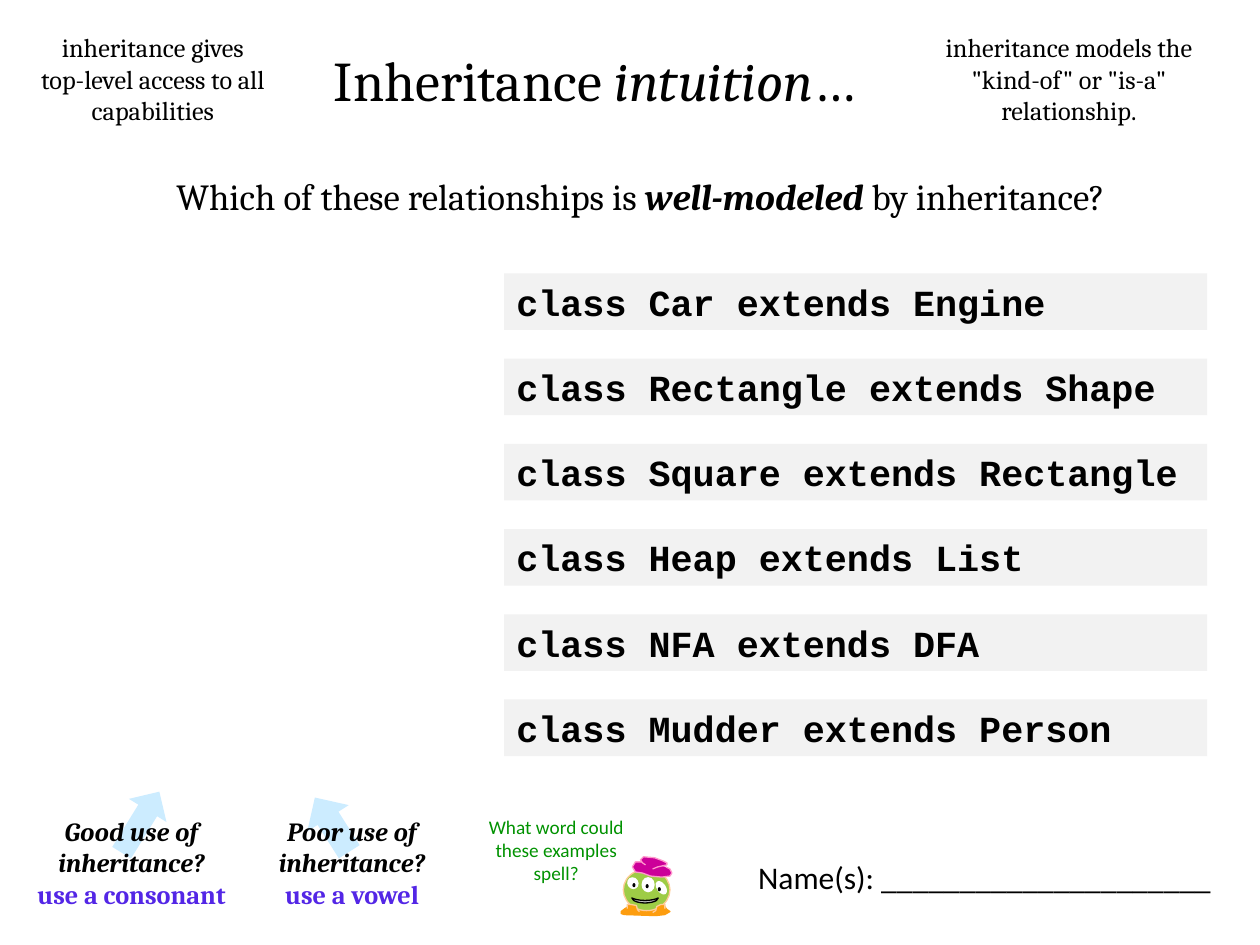
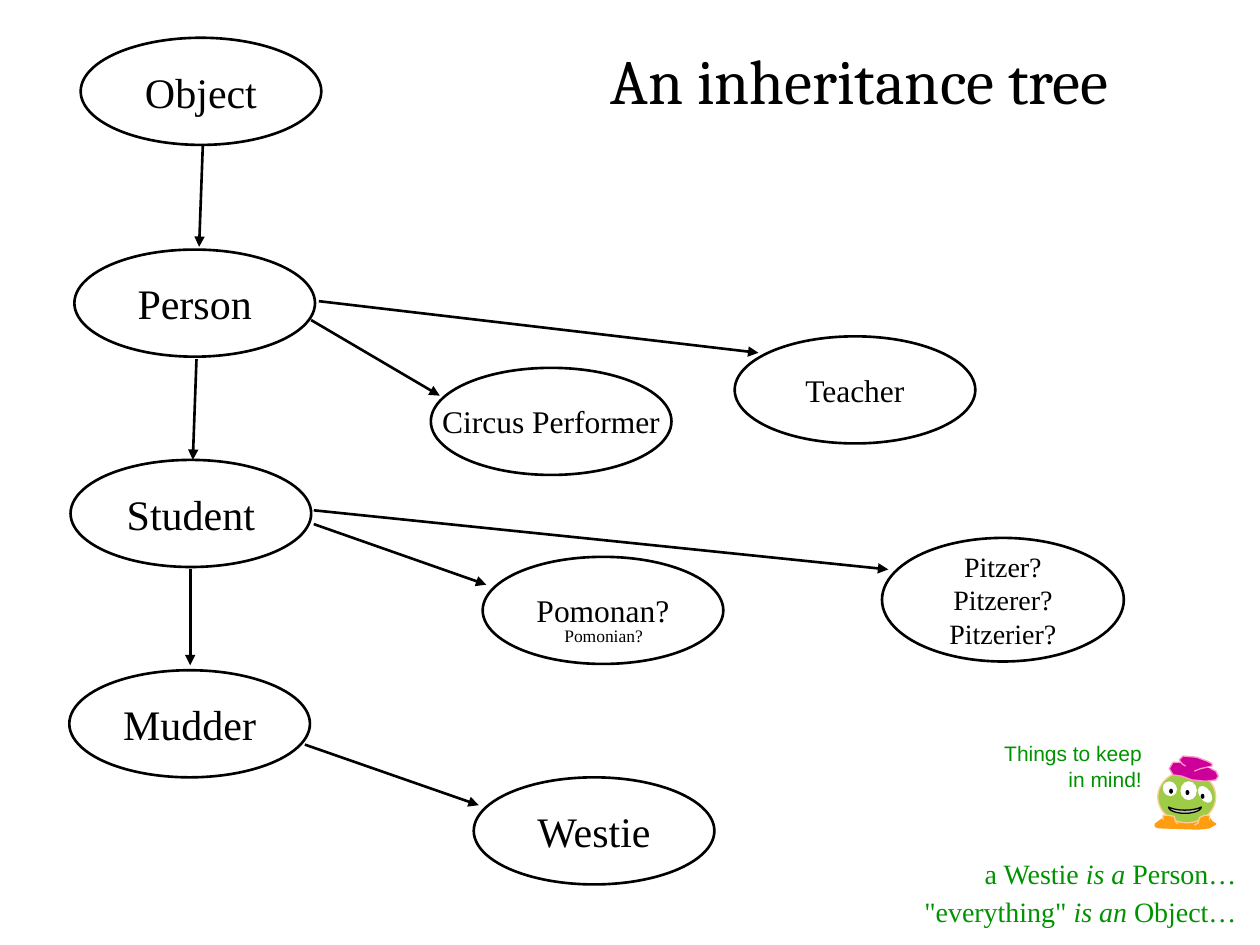
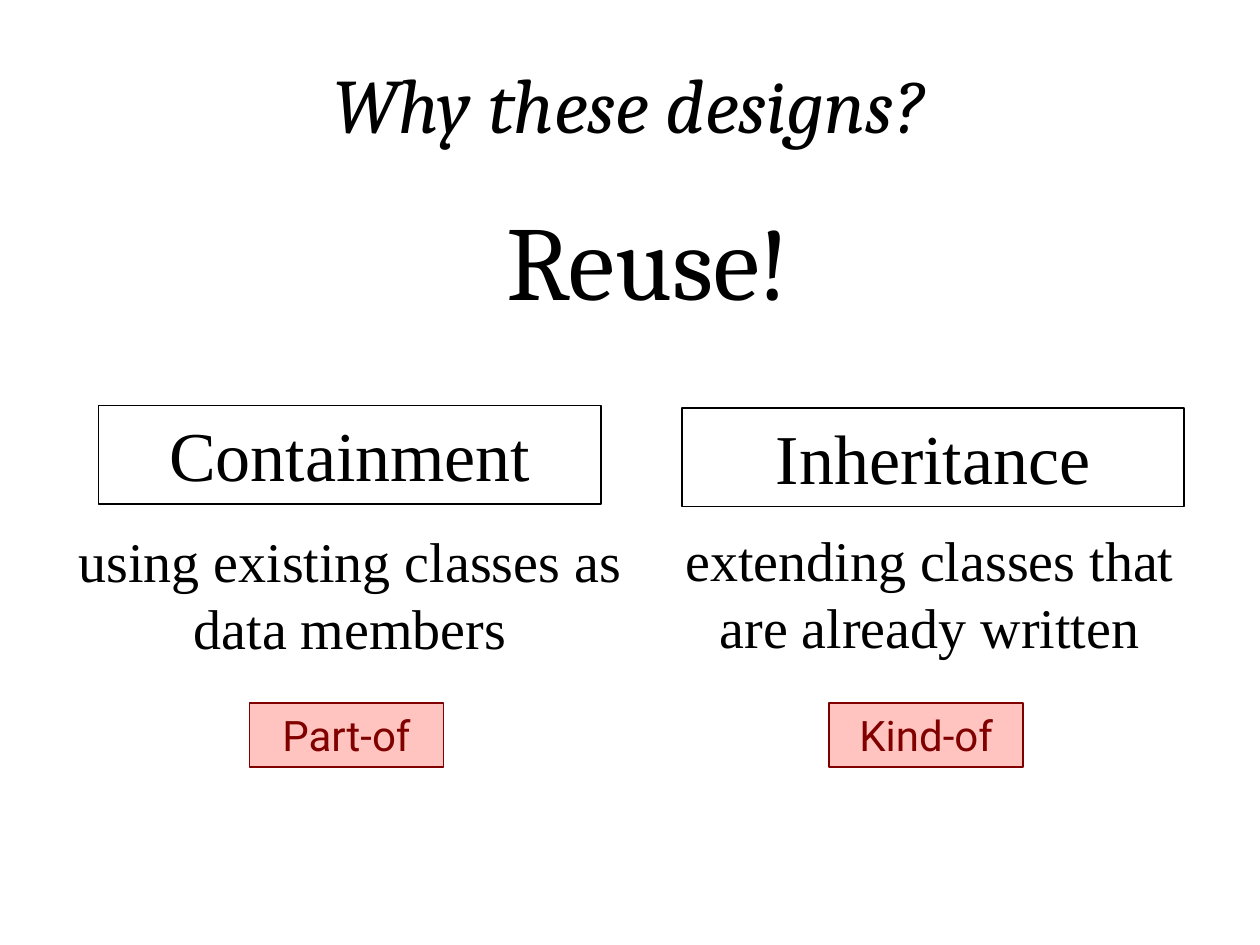
from dataclasses import dataclass, replace
from typing import NamedTuple

from lxml.etree import SubElement
from pptx import Presentation
from pptx.dml.color import RGBColor as Rgb
from pptx.enum.shapes import MSO_CONNECTOR as Link, MSO_SHAPE as Kind
from pptx.enum.text import MSO_ANCHOR as Anchor, MSO_AUTO_SIZE as Fit, PP_ALIGN as Align
from pptx.oxml.ns import qn
from pptx.util import Pt


@dataclass(frozen=True)
class Style:
    font: str
    size: float
    color: str = "000000"
    bold: bool = False
    ital: bool = False


@dataclass(frozen=True)
class Theme:
    ink: str = "000000"
    white: str = "FFFFFF"
    sky: str = "CCECFF"
    gray: str = "F2F2F2"
    pink: str = "FFC3C0"
    wine: str = "800000"
    violet: str = "5326E6"
    skin: str = "9ECC46"
    peach: str = "FFCC99"
    orange: str = "FD9D0F"
    plum: str = "CC0099"
    rose: str = "FF99CC"
    silver: str = "C0C0C0"
    title: Style = Style("Cambria", 32)
    ask: Style = Style("Cambria", 21)
    note: Style = Style("Cambria", 15)
    code: Style = Style("Courier New", 21, bold=True)
    quiz: Style = Style("Calibri", 11, "009200")
    name: Style = Style("Calibri", 18)
    node: Style = Style("Times New Roman", 24)
    aside: Style = Style("Times New Roman", 16, "009200")
    tip: Style = Style("Arial", 12, "009200")
    shout: Style = Style("Cambria", 60)
    head: Style = Style("Times New Roman", 40)
    body: Style = Style("Times New Roman", 32)
    tag: Style = Style("Roboto", 24, "800000")


T = Theme()


class Box(NamedTuple):
    x: float
    y: float
    w: float
    h: float


class Run(NamedTuple):
    text: str
    style: Style


class Node(NamedTuple):
    lines: tuple[str, ...]
    x: float
    y: float
    size: float = 24
    w: float = 137.5
    h: float = 61.2


class Arrow(NamedTuple):
    x1: float
    y1: float
    x2: float
    y2: float


class Column(NamedTuple):
    head: str
    head_box: Box
    text: str
    text_box: Box
    tag: str
    tag_box: Box


Lines = list[list[Run]]


def pts(box: Box) -> list[Pt]:
    return [Pt(n) for n in box]


def plain(style: Style, *lines: str) -> Lines:
    """Make one single-run paragraph per line."""
    return [[Run(line, style)] for line in lines]


def write(shape, lines: Lines, align=Align.CENTER, wrap: bool = True,
          fit=Fit.SHAPE_TO_FIT_TEXT, anchor=Anchor.TOP) -> None:
    frame = shape.text_frame
    frame.word_wrap, frame.auto_size, frame.vertical_anchor = wrap, fit, anchor
    for i, line in enumerate(lines):
        para = frame.paragraphs[0] if i == 0 else frame.add_paragraph()
        para.alignment = align
        for text, style in line:
            run = para.add_run()
            run.text = text
            font = run.font
            font.name, font.size = style.font, Pt(style.size)
            font.bold, font.italic = style.bold, style.ital
            font.color.rgb = Rgb.from_string(style.color)


def paint(shape, fill: str | None, line: str | None, width: float) -> None:
    shape.shadow.inherit = False
    if fill:
        shape.fill.solid()
        shape.fill.fore_color.rgb = Rgb.from_string(fill)
    else:
        shape.fill.background()
    if line:
        shape.line.color.rgb = Rgb.from_string(line)
        shape.line.width = Pt(width)
    else:
        shape.line.fill.background()


def form(shapes, kind, box: Box, fill: str | None = None, line: str | None = None,
         width: float = 1, turn: float = 0):
    """Add a painted preset shape."""
    shape = shapes.add_shape(kind, *pts(box))
    shape.rotation = turn
    paint(shape, fill, line, width)
    return shape


def label(slide, box: Box, lines: Lines, align=Align.CENTER, wrap: bool = True) -> None:
    write(slide.shapes.add_textbox(*pts(box)), lines, align, wrap)


def start(deck, box: Box, runs: list[Run]):
    """Add a slide with its title set in the given box."""
    slide = deck.slides.add_slide(deck.slide_layouts[5])
    title = slide.shapes.title
    title.left, title.top, title.width, title.height = pts(box)
    write(title, [runs])
    return slide


def join(slide, arrow: Arrow) -> None:
    line = slide.shapes.add_connector(Link.STRAIGHT, *[Pt(n) for n in arrow])
    line.line.color.rgb = Rgb.from_string(T.ink)
    line.line.width = Pt(1.5)
    SubElement(line.line._get_or_add_ln(), qn("a:tailEnd"), type="triangle")
    SubElement(line._element.spPr, qn("a:effectLst"))


FOOT = [(24, 44), (34, 45), (42, 48), (45, 52), (48, 54), (43, 57), (34, 58),
        (3, 57), (0, 56), (0, 54), (4, 51), (9, 48), (17, 44)]
BRIM = [(23, 5), (14, 5), (11, 10), (14, 15), (21, 16), (29, 19), (40, 20),
        (48, 19), (50, 16), (48, 12), (44, 10)]
CROWN = [(24, 8), (21, 6), (19, 3), (22, 0), (33, 1), (41, 4), (45, 6),
         (45, 8), (36, 10), (31, 12)]
LEGS = ([(6, 51), (6, 47), (10, 47), (15, 48), (16, 52), (18, 54)],
        [(43, 51), (43, 47), (39, 47), (35, 49), (34, 53), (31, 55)])
EYES = [(Box(6, 20, 11, 12), 327.2), (Box(20, 20, 13, 15), 0), (Box(35, 23, 9, 15), 325.5)]
PUPILS = [(11, 26), (24, 27), (36, 30)]


def alien(slide, x: float, y: float, unit: float) -> None:
    """Draw the three-eyed figure; unit is the length of one grid step."""
    group = slide.shapes.add_group_shape().shapes

    def part(kind, box: Box, fill: str, line: str | None = None, turn: float = 0) -> None:
        place = Box(x + box.x * unit, y + box.y * unit, box.w * unit, box.h * unit)
        form(group, kind, place, fill, line, 0.75, turn)

    def trace(dots: list[tuple[int, int]], fill: str, line: str, close: bool = False) -> None:
        path = group.build_freeform(*dots[0], scale=Pt(unit))
        path.add_line_segments(dots[1:], close=close)
        paint(path.convert_to_shape(Pt(x), Pt(y)), fill, line, 0.75)

    trace(FOOT, T.orange, T.orange, close=True)
    part(Kind.OVAL, Box(2, 12, 46, 41), T.skin, T.peach)
    for box, turn in EYES:
        part(Kind.OVAL, box, T.white, turn=turn)
    for px, py in PUPILS:
        part(Kind.OVAL, Box(px, py, 3, 4), T.ink)
    part(Kind.MOON, Box(21, 30, 5, 26), T.silver, T.ink, 270)
    for dots in (BRIM, CROWN):
        trace(dots, T.plum, T.rose)
    for dots in LEGS:
        trace(dots, T.orange, T.peach)


CLASSES = ["Car extends Engine", "Rectangle extends Shape", "Square extends Rectangle",
           "Heap extends List", "NFA extends DFA", "Mudder extends Person"]


def quiz(deck) -> None:
    slide = start(deck, Box(121.7, 22.3, 436.3, 46), [
        Run("Inheritance ", T.title), Run("intuition", replace(T.title, ital=True)),
        Run("…", T.title)])
    form(slide.shapes, Kind.DOWN_ARROW, Box(175.7, 452.9, 28.1, 36.7), T.sky, turn=147.6)
    form(slide.shapes, Kind.DOWN_ARROW, Box(67.7, 449.3, 25.2, 41), T.sky, turn=211.7)
    label(slide, Box(15, 14.4, 144.7, 62),
          plain(T.note, "inheritance gives top-level access to all capabilities"))
    label(slide, Box(512.6, 14.4, 196.6, 62),
          plain(T.note, 'inheritance models the "kind-of" or "is-a" relationship.'))
    label(slide, Box(48.2, 95.8, 635.8, 32.4), [[
        Run("Which of these relationships is ", T.ask),
        Run("well-modeled ", replace(T.ask, bold=True, ital=True)),
        Run("by inheritance?", T.ask)]])
    for i, text in enumerate(CLASSES):
        bar = form(slide.shapes, Kind.RECTANGLE, Box(288, 156.2 + 48.7 * i, 401.8, 32.4), T.gray)
        write(bar, plain(T.code, "class " + text), Align.LEFT)
    strong = replace(T.note, bold=True)
    for i, (use, kind) in enumerate([("Good", "consonant"), ("Poor", "vowel")]):
        label(slide, Box(12.2 + 126 * i, 462.2, 126, 62), [
            [Run(f"{use} use of inheritance?", replace(strong, ital=True))],
            [Run(f"use a {kind}", replace(strong, color=T.violet))]])
    alien(slide, 355, 489.6, 0.58)
    label(slide, Box(270, 462.2, 95.8, 47.5),
          plain(T.quiz, "What word could these examples spell?"))
    label(slide, Box(426.2, 486.7, 276.5, 28.8),
          plain(T.name, "Name(s): _____________________"), Align.LEFT, wrap=False)


NODES = [
    Node(("Object",), 46.1, 21.6),
    Node(("Person",), 42.5, 142.6),
    Node(("Student",), 40.3, 262.8),
    Node(("Mudder",), 39.6, 383),
    Node(("Circus Performer",), 246.2, 210.2, 18),
    Node(("Teacher",), 419.8, 192.2, 18),
    Node(("Pomonan?",), 275.8, 318.2, 18),
    Node(("Westie",), 270.7, 444.2),
    Node(("Pitzer?", "Pitzerer?", "Pitzerier?"), 504, 307.4, 16, 138.2, 70.6),
]
ARROWS = [
    Arrow(115.9, 83.5, 113.8, 141.1),
    Arrow(112.3, 205.2, 110.2, 262.8),
    Arrow(108.7, 325.4, 108.7, 380.2),
    Arrow(177.8, 182.9, 251.3, 226.1),
    Arrow(182.2, 172.1, 433.4, 201.6),
    Arrow(179.3, 299.5, 277.9, 334.1),
    Arrow(179.3, 291.6, 507.6, 325.4),
    Arrow(174.2, 425.5, 273.6, 460.1),
]


def tree(deck) -> None:
    slide = start(deck, Box(293.8, 20.2, 394.6, 51.1),
                  [Run("An inheritance tree", replace(T.title, size=36))])
    for node in NODES:
        oval = form(slide.shapes, Kind.OVAL, Box(node.x, node.y, node.w, node.h),
                    line=T.ink, width=1.5)
        write(oval, plain(replace(T.node, size=node.size), *node.lines),
              wrap=False, fit=Fit.NONE, anchor=Anchor.MIDDLE)
    for arrow in ARROWS:
        join(slide, arrow)
    label(slide, Box(315.4, 353.5, 59.8, 19.4),
          plain(replace(T.node, size=10), "Pomonian?"), Align.LEFT, wrap=False)
    asides = [("a Westie ", "is a ", "Person…"), ('"everything" ', "is an ", "Object…")]
    for i, (who, link, what) in enumerate(asides):
        label(slide, Box(473.8, 486 + 21.6 * i, 239.8, 26.6), [[
            Run(who, T.aside), Run(link, replace(T.aside, ital=True)),
            Run(what, T.aside)]], Align.RIGHT)
    label(slide, Box(563.8, 419.8, 95.8, 36),
          plain(T.tip, "Things to keep in mind!"), Align.RIGHT)
    alien(slide, 660.2, 432, 0.72)


COLUMNS = [
    Column("Containment", Box(56.2, 231.8, 287.3, 56.2),
           "using existing classes as data members", Box(30.2, 297.4, 339.8, 84.2),
           "Part-of", Box(142.6, 401.8, 110.9, 36.7)),
    Column("Inheritance", Box(389.5, 233.3, 287.3, 56.2),
           "extending classes that are already written", Box(361.4, 296.6, 339.8, 84.2),
           "Kind-of", Box(473.8, 401.8, 110.9, 36.7)),
]


def reuse(deck) -> None:
    slide = start(deck, Box(53.3, 28.8, 612.7, 59.8),
                  [Run("Why these designs?", replace(T.title, size=44, ital=True))])
    label(slide, Box(234.7, 108, 271.4, 79.2), plain(T.shout, "Reuse!"))
    for col in COLUMNS:
        head = form(slide.shapes, Kind.RECTANGLE, col.head_box, line=T.ink)
        write(head, plain(T.head, col.head))
        label(slide, col.text_box, plain(T.body, col.text))
        tag = form(slide.shapes, Kind.RECTANGLE, col.tag_box, T.pink, T.wine)
        write(tag, plain(T.tag, col.tag))


def main() -> None:
    deck = Presentation()
    deck.slide_width, deck.slide_height = Pt(720), Pt(540)
    for build in (quiz, tree, reuse):
        build(deck)
    deck.save("out.pptx")


if __name__ == "__main__":
    main()
